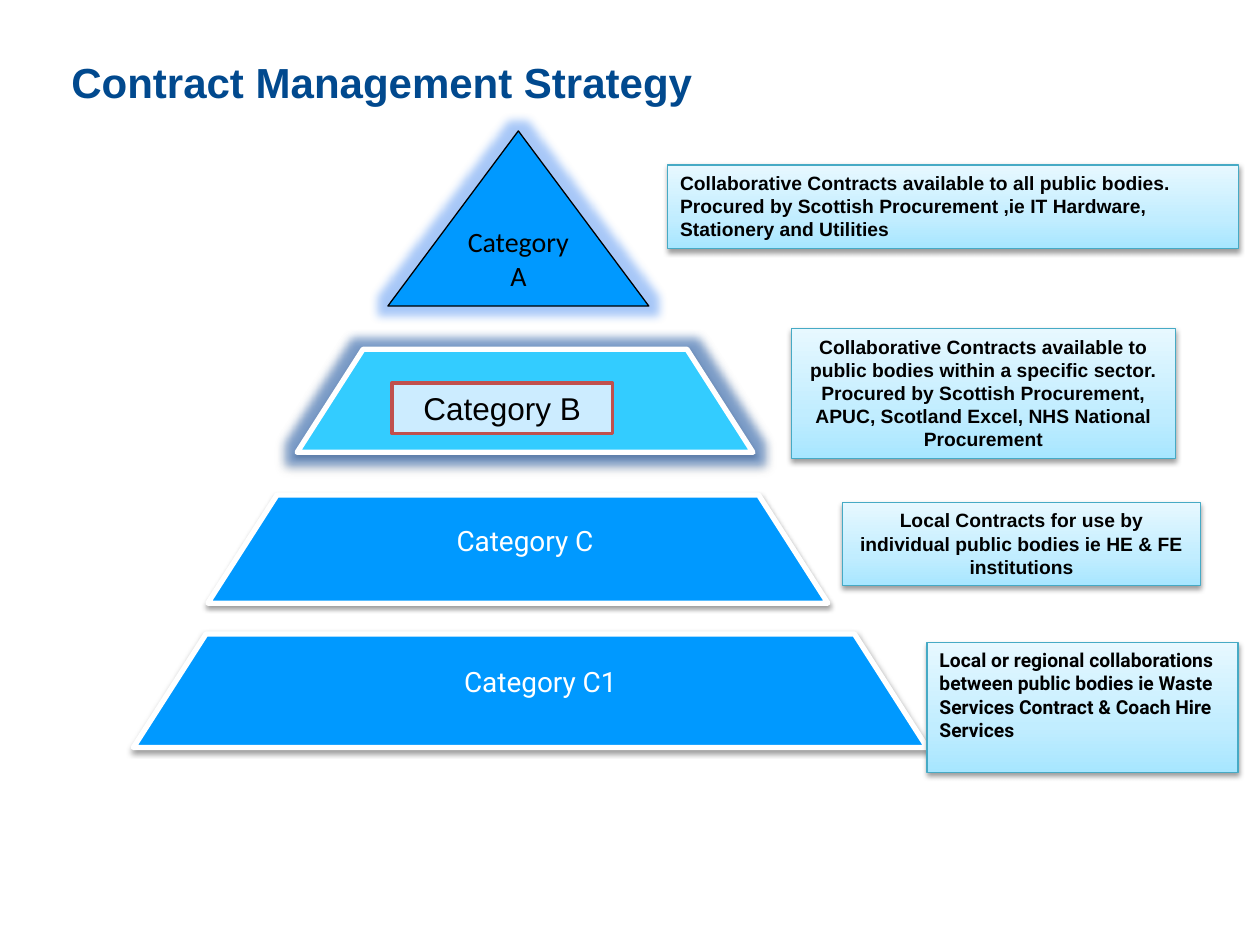
from copy import deepcopy

from lxml import etree
from pptx import Presentation
from pptx.dml.color import RGBColor
from pptx.enum.shapes import MSO_SHAPE
from pptx.enum.text import MSO_ANCHOR, PP_ALIGN
from pptx.oxml.ns import qn
from pptx.util import Cm, Pt

NAVY = RGBColor(0x01, 0x49, 0x8E)
BLUE = RGBColor(0x00, 0x99, 0xFF)
CYAN = RGBColor(0x33, 0xCC, 0xFF)
PALE_BLUE = RGBColor(0xCC, 0xEC, 0xFF)
RED = RGBColor(0xC0, 0x50, 0x4D)
TEAL = RGBColor(0x46, 0xAA, 0xC5)
BLACK = RGBColor(0x00, 0x00, 0x00)
WHITE = RGBColor(0xFF, 0xFF, 0xFF)
LIGHT_GLOW = RGBColor(0x25, 0x75, 0xED)
DARK_GLOW = RGBColor(0x10, 0x58, 0xB8)
NOTE_GRADIENT = [
    (0, RGBColor(0xA7, 0xE6, 0xFF)),
    (0.35, RGBColor(0xC1, 0xED, 0xFF)),
    (1, RGBColor(0xE7, 0xF8, 0xFF)),
]

# Explanatory notes: left, top, width, height in cm, font, alignment, text
NOTES = [
    (13.46, 3.33, 11.51, 1.68, "Arial", PP_ALIGN.LEFT,
     "Collaborative Contracts available to all public bodies. Procured by "
     "Scottish Procurement ,ie IT Hardware, Stationery and Utilities"),
    (15.95, 6.63, 7.75, 2.62, "Arial", PP_ALIGN.CENTER,
     "Collaborative Contracts available to public bodies within a specific "
     "sector. Procured by Scottish Procurement, APUC, Scotland Excel, "
     "NHS National Procurement"),
    (16.99, 10.13, 7.21, 1.68, "Arial", PP_ALIGN.CENTER,
     "Local Contracts for use by individual public bodies ie HE & FE "
     "institutions"),
    (18.69, 12.95, 6.27, 2.62, "Roboto", PP_ALIGN.LEFT,
     "Local or regional collaborations between public bodies ie Waste "
     "Services Contract & Coach Hire Services"),
]

# Lower tiers: label, trapezoid box and label box in cm
LOWER_TIERS = [
    ("Category C", (4.19, 9.98, 12.5, 2.18), (6.38, 10.31, 8.41, 1.24)),
    ("Category C1", (2.69, 12.78, 16, 2.29), (5.51, 13.13, 10.77, 1.3)),
]


def add_block(shapes, kind, box, fill=None, line=None, line_width=0.75):
    shape = shapes.add_shape(kind, *(Cm(value) for value in box))
    shape.shadow.inherit = False
    if fill is not None:
        shape.fill.solid()
        shape.fill.fore_color.rgb = fill
    if line is None:
        shape.line.fill.background()
    else:
        shape.line.color.rgb = line
        shape.line.width = Pt(line_width)
    return shape


def add_effect(shape, name, color, alpha, **attributes):
    """Append a glow or an outer shadow; a glow has to come first."""
    effects = shape._element.spPr.find(qn("a:effectLst"))
    effect = etree.SubElement(effects, qn(name), attributes)
    rgb = etree.SubElement(effect, qn("a:srgbClr"), val=str(color))
    etree.SubElement(rgb, qn("a:alpha"), val=str(alpha * 1000))


def add_glow(shape, color, alpha):
    add_effect(shape, "a:glow", color, alpha, rad=str(Pt(11)))


def add_shadow(shape):
    add_effect(shape, "a:outerShdw", BLACK, 38, blurRad=str(Pt(3.1)),
               dist=str(Pt(1.6)), dir="5400000", rotWithShape="0")


def write_text(shape, text, font, size, color, alignment=PP_ALIGN.CENTER,
               bold=False, anchor=MSO_ANCHOR.TOP):
    frame = shape.text_frame
    frame.word_wrap = True
    frame.vertical_anchor = anchor
    paragraph = frame.paragraphs[0]
    paragraph.alignment = alignment
    run = paragraph.add_run()
    run.text = text
    run.font.name = font
    run.font.size = Pt(size)
    run.font.bold = bold
    run.font.color.rgb = color


def add_trapezoid(shapes, box, fill):
    shape = add_block(shapes, MSO_SHAPE.TRAPEZOID, box, fill, WHITE, 3)
    shape.adjustments[0] = 0.64
    return shape


def add_lower_tier(slide, label, tier_box, label_box):
    group = slide.shapes.add_group_shape()
    add_shadow(add_trapezoid(group.shapes, tier_box, BLUE))
    plate = add_block(group.shapes, MSO_SHAPE.RECTANGLE, label_box, BLUE)
    write_text(plate, label, "Roboto", 16, WHITE, anchor=MSO_ANCHOR.MIDDLE)
    frame = plate.text_frame
    frame.margin_left = frame.margin_right = Cm(0.05)
    frame.margin_top = frame.margin_bottom = Cm(0.05)
    frame.paragraphs[0].line_spacing = 0.9


def fill_gradient(shape):
    shape.fill.gradient()
    shape.fill.gradient_angle = 90
    stop_list = shape._element.spPr.find(qn("a:gradFill")).find(qn("a:gsLst"))
    stop_list.insert(1, deepcopy(stop_list[0]))
    for stop, (position, color) in zip(shape.fill.gradient_stops, NOTE_GRADIENT):
        stop.position = position
        stop.color.rgb = color


def add_note(slide, left, top, width, height, font, alignment, text):
    note = add_block(slide.shapes, MSO_SHAPE.RECTANGLE,
                     (left, top, width, height), line=TEAL)
    fill_gradient(note)
    add_shadow(note)
    write_text(note, text, font, 11, BLACK, alignment, bold=True)


def main():
    presentation = Presentation()
    presentation.slide_width = Cm(25.4)
    presentation.slide_height = Cm(19.05)
    slide = presentation.slides.add_slide(presentation.slide_layouts[6])

    # Title
    title = slide.shapes.add_textbox(Cm(1.19), Cm(1.02), Cm(22.25), Cm(1.27))
    write_text(title, "Contract Management Strategy", "Arial", 24, NAVY,
               PP_ALIGN.LEFT, bold=True)

    # Top of the pyramid
    peak = add_block(slide.shapes, MSO_SHAPE.ISOSCELES_TRIANGLE,
                     (7.82, 2.64, 5.26, 3.53), BLUE, BLACK)
    add_glow(peak, LIGHT_GLOW, 40)
    write_text(peak, "Category A", "Calibri", 16, BLACK)

    # Second tier with its framed label
    second_tier = add_trapezoid(slide.shapes, (5.99, 7.04, 9.19, 2.08), CYAN)
    add_glow(second_tier, DARK_GLOW, 45)
    add_shadow(second_tier)
    label = add_block(slide.shapes, MSO_SHAPE.RECTANGLE,
                      (7.9, 7.72, 4.45, 1.02), PALE_BLUE, RED, 2)
    write_text(label, "Category B", "Arial", 18, BLACK)

    # Lower tiers
    for tier in LOWER_TIERS:
        add_lower_tier(slide, *tier)

    # Notes beside the tiers
    for note in NOTES:
        add_note(slide, *note)

    presentation.save("out.pptx")


if __name__ == "__main__":
    main()
